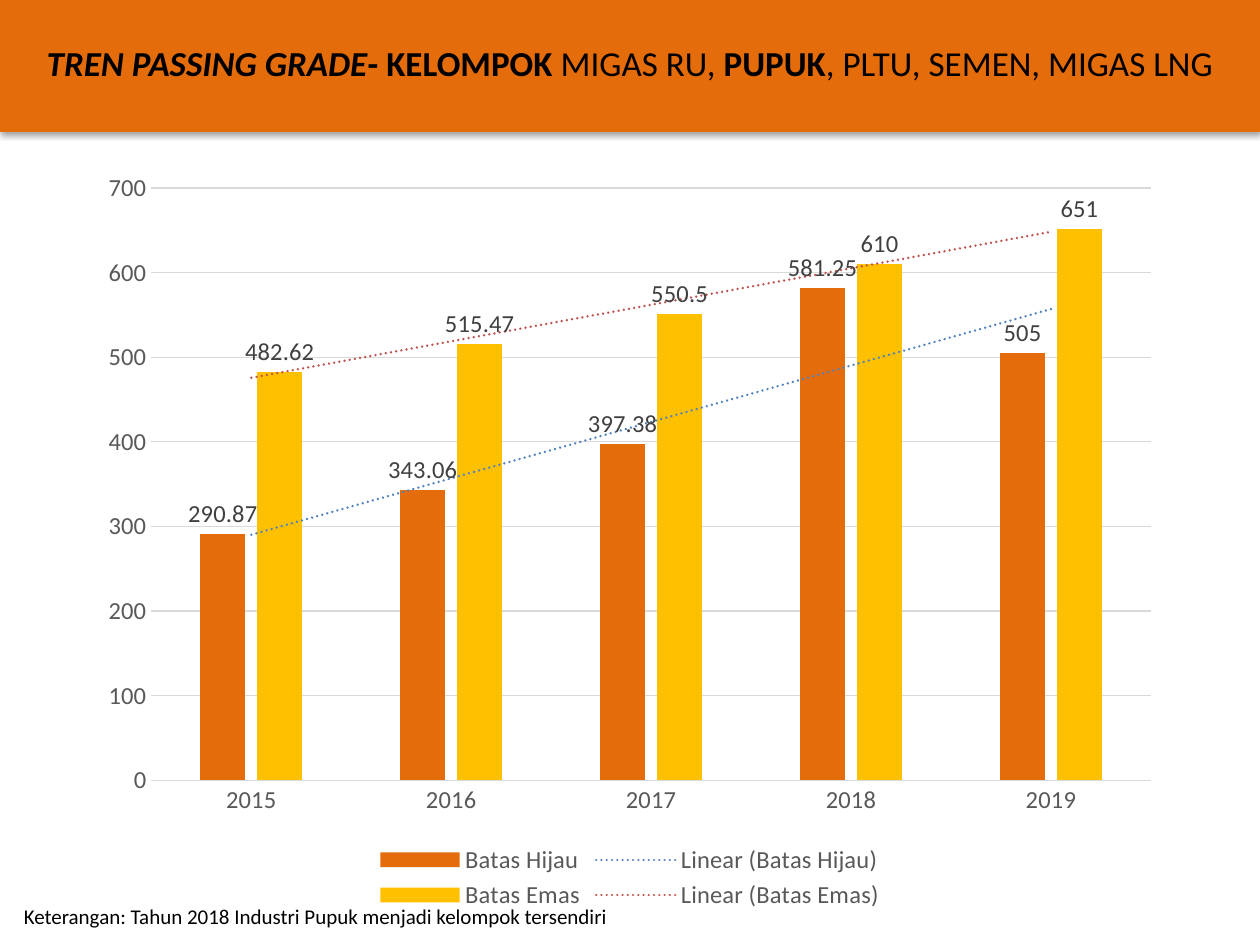
from lxml import etree
from pptx import Presentation
from pptx import util as u
from pptx.chart.data import CategoryChartData
from pptx.dml.color import RGBColor
from pptx.enum import chart as charts, text
from pptx.oxml import parse_xml
from pptx.oxml.ns import nsdecls, qn

# Content: title spans are (wording, bold, italic)
TITLE = [
    ("TREN PASSING GRADE", True, True),
    ("- KELOMPOK ", True, False),
    ("MIGAS RU, ", False, False),
    ("PUPUK", True, False),
    (", PLTU, SEMEN, MIGAS LNG", False, False),
]
YEARS = ["2015", "2016", "2017", "2018", "2019"]
SERIES = [
    {"name": "Batas Hijau", "values": (290.87, 343.06, 397.38, 581.25, 505),
     "fill": "E46C0A", "trend": "4F81BD"},
    {"name": "Batas Emas", "values": (482.62, 515.47, 550.5, 610, 651),
     "fill": "FFC000", "trend": "C0504D"},
]
NOTE = "Keterangan: Tahun 2018 Industri Pupuk menjadi kelompok tersendiri"

THEME = {
    "font": "Calibri", "band": "E46C0A", "ink": "000000",
    "axis": "595959", "label": "404040", "grid": "D9D9D9",
    "title_size": 20, "chart_size": 14, "note_size": 12,
}

# Positions in centimetres: left, top, width, height
PAGE = (25.4, 19.05)
TITLE_AREA = (0, -0.03, 25.4, 2.69)
CHART_AREA = (1.75, 3.18, 21.89, 15.27)
NOTE_AREA = (0.23, 18.08, 12.29, 0.76)


def area(lengths):
    return [u.Cm(length) for length in lengths]


def style_font(font, size, color):
    font.name = THEME["font"]
    font.size = u.Pt(THEME[size])
    font.color.rgb = RGBColor.from_string(THEME[color])


def style_fill(fill, color):
    fill.solid()
    fill.fore_color.rgb = RGBColor.from_string(color)


def style_line(line, color):
    line.width = u.Pt(0.75)
    line.color.rgb = RGBColor.from_string(color)


def add_shadow(box):
    box._element.spPr.append(parse_xml(
        f'<a:effectLst {nsdecls("a")}><a:outerShdw blurRad="{u.Pt(3.1)}" '
        f'dist="{u.Pt(1.8)}" dir="5400000" rotWithShape="0">'
        '<a:srgbClr val="000000"><a:alpha val="35000"/></a:srgbClr>'
        '</a:outerShdw></a:effectLst>'))


def add_trend(series, color):
    trend = parse_xml(
        f'<c:trendline {nsdecls("c", "a")}><c:spPr>'
        f'<a:ln w="{u.Pt(1.5)}" cap="rnd"><a:solidFill><a:srgbClr val="{color}"/>'
        '</a:solidFill><a:prstDash val="sysDot"/></a:ln></c:spPr>'
        '<c:trendlineType val="linear"/><c:dispRSqr val="0"/>'
        '<c:dispEq val="0"/></c:trendline>')
    series._element.find(qn("c:cat")).addprevious(trend)


def add_title(page):
    box = page.shapes.title
    box.left, box.top, box.width, box.height = area(TITLE_AREA)
    style_fill(box.fill, THEME["band"])
    box.line.fill.background()
    add_shadow(box)
    frame = box.text_frame
    frame.auto_size = text.MSO_AUTO_SIZE.NONE
    frame.word_wrap = True
    frame.vertical_anchor = text.MSO_ANCHOR.MIDDLE
    para = frame.paragraphs[0]
    para.alignment = text.PP_ALIGN.CENTER
    para.line_spacing = 0.9
    for wording, bold, italic in TITLE:
        span = para.add_run()
        span.text = wording
        style_font(span.font, "title_size", "ink")
        span.font.bold, span.font.italic = bold, italic


def add_trend_chart(page):
    data = CategoryChartData()
    data.categories = YEARS
    for entry in SERIES:
        data.add_series(entry["name"], entry["values"])
    chart = page.shapes.add_chart(
        charts.XL_CHART_TYPE.COLUMN_CLUSTERED, *area(CHART_AREA), data).chart
    style_font(chart.font, "chart_size", "ink")
    chart.has_title = False

    # Legend
    chart.has_legend = True
    chart.legend.position = charts.XL_LEGEND_POSITION.BOTTOM
    chart.legend.include_in_layout = False
    style_font(chart.legend.font, "chart_size", "axis")

    # Axes
    for axis in (chart.category_axis, chart.value_axis):
        axis.major_tick_mark = axis.minor_tick_mark = charts.XL_TICK_MARK.NONE
        style_font(axis.tick_labels.font, "chart_size", "axis")
    style_line(chart.category_axis.format.line, THEME["grid"])
    chart.value_axis.format.line.fill.background()
    chart.value_axis.has_major_gridlines = True
    style_line(chart.value_axis.major_gridlines.format.line, THEME["grid"])

    # Columns, value labels and trend lines
    plot = chart.plots[0]
    plot.vary_by_categories = False
    plot.gap_width, plot.overlap = 219, -27
    for series, entry in zip(plot.series, SERIES):
        style_fill(series.format.fill, entry["fill"])
        series.invert_if_negative = False
        labels = series.data_labels
        labels.show_value = True
        labels.position = charts.XL_LABEL_POSITION.OUTSIDE_END
        style_font(labels.font, "chart_size", "label")
        add_trend(series, entry["trend"])


def add_note(page):
    frame = page.shapes.add_textbox(*area(NOTE_AREA)).text_frame
    frame.word_wrap = False
    frame.auto_size = text.MSO_AUTO_SIZE.SHAPE_TO_FIT_TEXT
    frame.text = NOTE
    style_font(frame.paragraphs[0].runs[0].font, "note_size", "ink")


def main():
    deck = Presentation()
    deck.slide_width, deck.slide_height = area(PAGE)
    page = deck.slides.add_slide(deck.slide_layouts.get_by_name("Title Only"))
    add_title(page)
    add_trend_chart(page)
    add_note(page)
    deck.save("out.pptx")


if __name__ == "__main__":
    main()
